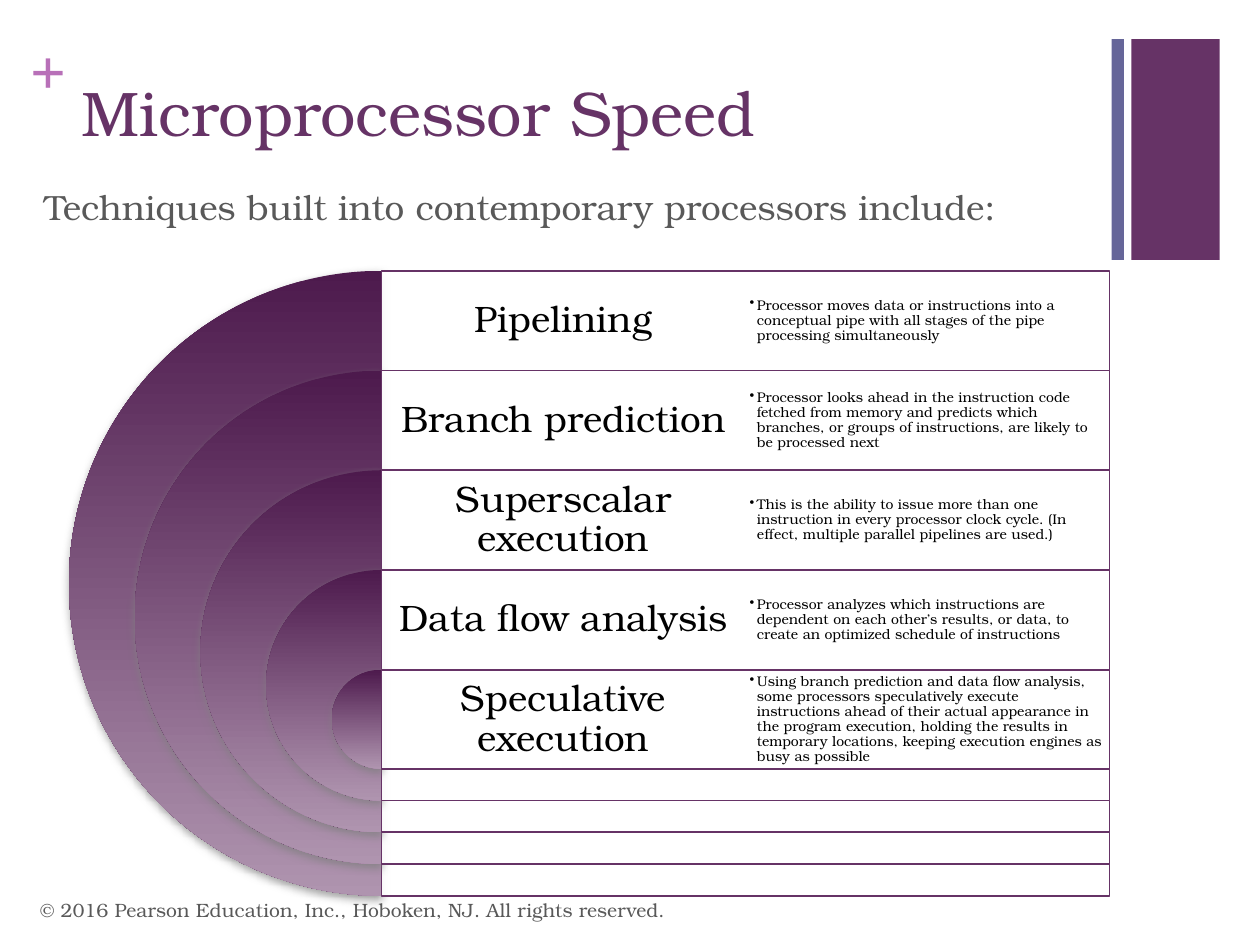
from lxml.etree import SubElement
from pptx import Presentation
from pptx.dml.color import RGBColor
from pptx.enum.shapes import MSO_SHAPE
from pptx.enum.text import MSO_ANCHOR, PP_ALIGN
from pptx.oxml.ns import qn
from pptx.util import Cm, Pt

FONT = "TeX Gyre Bonum"
PURPLE, BLUE, ORCHID = "663366", "666699", "B870B8"
GRAY, BLACK, WHITE = "595959", "000000", "FFFFFF"
RING_TOP, RING_BOTTOM, SHADOW = "4D1A4D", "AF94AF", "808080"

ROW_H, RING_STEP = 2.01, 2.65
TECHNIQUES = [
    ("Pipelining",
     "Processor moves data or instructions into a conceptual pipe with all "
     "stages of the pipe processing simultaneously"),
    ("Branch prediction",
     "Processor looks ahead in the instruction code fetched from memory and "
     "predicts which branches, or groups of instructions, are likely to be "
     "processed next"),
    ("Superscalar execution",
     "This is the ability to issue more than one instruction in every "
     "processor clock cycle. (In effect, multiple parallel pipelines are "
     "used.)"),
    ("Data flow analysis",
     "Processor analyzes which instructions are dependent on each other’s "
     "results, or data, to create an optimized schedule of instructions"),
    ("Speculative execution",
     "Using branch prediction and data flow analysis, some processors "
     "speculatively execute instructions ahead of their actual appearance in "
     "the program execution, holding the results in temporary locations, "
     "keeping execution engines as busy as possible"),
]


def rgb(color):
    return RGBColor.from_string(color)


def set_attrs(obj, values):
    for name, value in values.items():
        setattr(obj, name, value)


def add_text(s, box, text, size, color, frame=None, para=None, font=None,
             bullet=False):
    """Add a one-paragraph text box; frame, para and font hold extra formats."""
    tf = s.shapes.add_textbox(*map(Cm, box)).text_frame
    set_attrs(tf, {"word_wrap": True, **(frame or {})})
    p = tf.paragraphs[0]
    r = p.add_run()
    r.text = text
    if bullet:
        pPr = p._p.get_or_add_pPr()
        pPr.set("marL", str(Cm(0.15)))
        pPr.set("indent", str(Cm(-0.15)))
        SubElement(pPr, qn("a:buChar"), char="•")
    set_attrs(p, para or {})
    set_attrs(r.font, {"name": FONT, "size": Pt(size), **(font or {})})
    r.font.color.rgb = rgb(color)


def add_box(s, box, fill):
    sp = s.shapes.add_shape(MSO_SHAPE.RECTANGLE, *map(Cm, box))
    sp.shadow.inherit = False
    sp.fill.solid()
    sp.fill.fore_color.rgb = rgb(fill)
    sp.line.fill.background()
    return sp


def set_alpha(parent, percent):
    for clr in parent.iter(qn("a:srgbClr")):
        SubElement(clr, qn("a:alpha"), val=str(percent * 1000))


def insets(cm):
    sides = ("left", "top", "right", "bottom")
    return {f"margin_{side}": Cm(cm) for side in sides}


def add_half_ring(s, left, top, size):
    """Left half of a disc, with a vertical gradient and a soft shadow."""
    sp = s.shapes.add_shape(MSO_SHAPE.PIE, *map(Cm, (left, top, size, size)))
    sp.adjustments[0], sp.adjustments[1] = 54, 162
    sp.line.fill.background()
    sp.fill.gradient()
    sp.fill.gradient_angle = 270
    for stop, color, pos in zip(sp.fill.gradient_stops,
                                (RING_TOP, RING_BOTTOM), (0, 1)):
        stop.color.rgb = rgb(color)
        stop.position = pos
    sp.shadow.inherit = False
    effects = sp._element.spPr.find(qn("a:effectLst"))
    shadow = SubElement(effects, qn("a:outerShdw"), blurRad=str(Pt(5)),
                        dist=str(Pt(2)), dir="5400000", rotWithShape="0")
    SubElement(shadow, qn("a:srgbClr"), val=SHADOW)
    set_alpha(shadow, 75)


def add_header(s, left, top, width):
    add_box(s, (left + width - 1.78, top + 0.15, 1.78, 4.45), PURPLE)
    add_text(s, (left, top, 0.74, 1.55), "+", 36, ORCHID, insets(0),
             font={"name": "Times New Roman", "bold": True})
    add_box(s, (left + width - 2.18, top + 0.15, 0.25, 4.45), BLUE)
    add_text(s, (left + 0.79, top + 0.71, 20.98, 3.1),
             "Microprocessor Speed", 36, PURPLE)
    add_text(s, (left + 0.03, top + 2.97, 21, 1.7),
             "Techniques built into contemporary processors include:",
             20, GRAY)


def add_target(s, left, top, width, height):
    """Nested half rings, each opening onto a row that names a technique."""
    axis = left + height / 2
    panel_w = width - height / 2
    col_w = panel_w / 2
    for i, (name, detail) in enumerate(TECHNIQUES):
        size = height - i * RING_STEP
        y = top + i * ROW_H
        add_half_ring(s, axis - size / 2, y, size)
        panel = add_box(s, (axis, y, panel_w, size), WHITE)
        set_alpha(panel._element.spPr, 90)
        panel.line.color.rgb = rgb(PURPLE)
        panel.line.width = Pt(1)
        middle = {"vertical_anchor": MSO_ANCHOR.MIDDLE}
        add_text(s, (axis, y, col_w, ROW_H), name, 21, BLACK,
                 {**middle, **insets(0.23)},
                 {"alignment": PP_ALIGN.CENTER, "line_spacing": 0.9})
        add_text(s, (axis + col_w, y, col_w, ROW_H), detail, 8, BLACK,
                 {**middle, **insets(0.08)},
                 {"level": 1, "line_spacing": 0.9}, bullet=True)


def add_footer(s, *box):
    add_text(s, box, "© 2016 Pearson Education, Inc., Hoboken, NJ. "
             "All rights reserved.", 11, GRAY,
             {"vertical_anchor": MSO_ANCHOR.MIDDLE})


def main():
    prs = Presentation()
    prs.slide_width, prs.slide_height = Cm(25.4), Cm(19.05)
    s = prs.slides.add_slide(prs.slide_layouts[6])
    add_header(s, 0.61, 0.64, 23.98)
    add_target(s, 1.39, 5.46, 20.98, 12.6)
    add_footer(s, 0.56, 17.83, 17.02, 1.02)
    prs.save("out.pptx")


if __name__ == "__main__":
    main()
